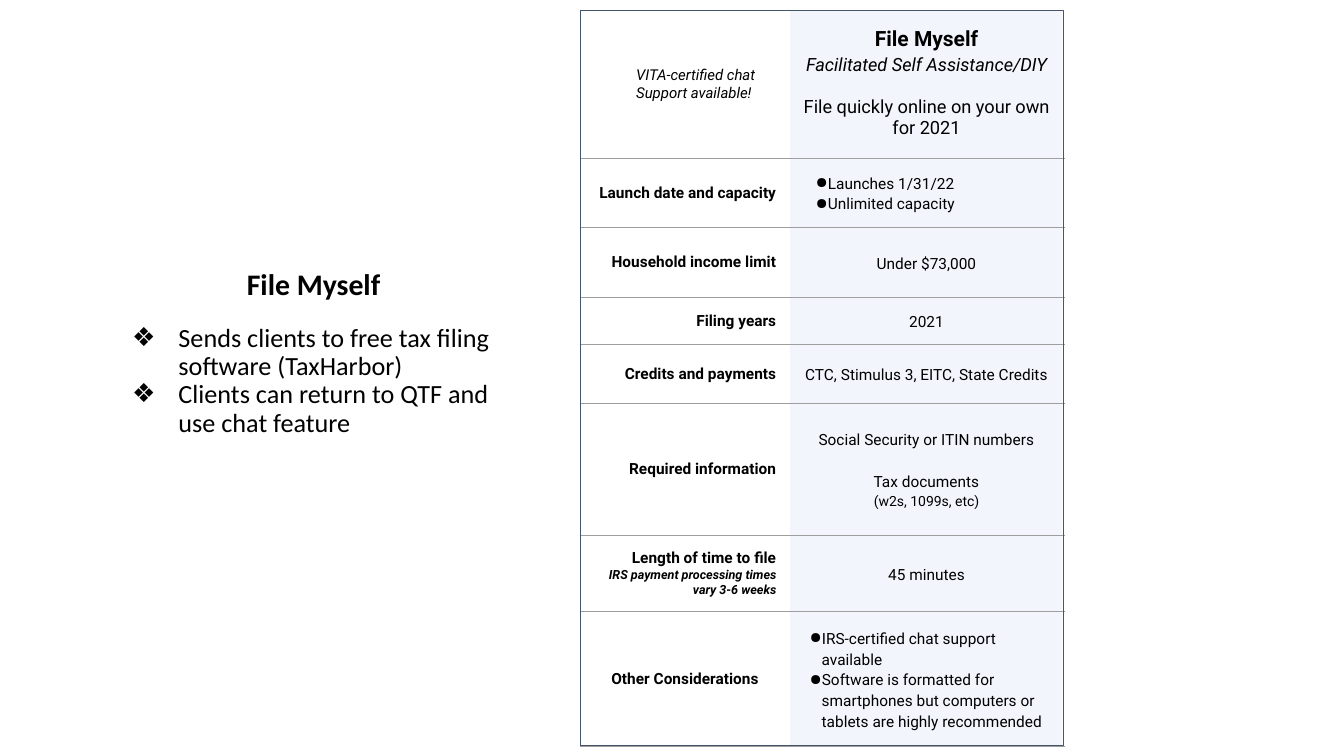
from dataclasses import dataclass

from lxml import etree
from pptx import Presentation
from pptx import util as u
from pptx.dml.color import RGBColor
from pptx.enum import shapes, text
from pptx.oxml.ns import qn

PX = 9144  # 100 px to the inch
SIDES = ("left", "right", "top", "bottom")


@dataclass(frozen=True)
class Theme:
    ink: str = "000000"
    tint: str = "E6EBF9"
    opaque: int = 49
    rule: str = "9E9E9E"
    white: str = "FFFFFF"
    edge: str = "44546A"
    main: str = "Calibri"
    grid: str = "Roboto"
    title: float = 21.3
    body: float = 18.7
    head: float = 15
    lead: float = 13
    cell: float = 11
    aside: float = 10.7
    small: float = 10
    note: float = 9
    hair: float = 0.75
    thick: float = 3
    pad: int = 13


def px(n):
    return u.Emu(n * PX)


def put(obj, vals):
    for name, val in vals.items():
        setattr(obj, name, val)


def sub(top, tag, **attrs):
    return etree.SubElement(top, qn(tag), attrs)


class Deck:
    def __init__(self, theme, wide, high):
        self.theme = theme
        self.pads = {f"margin_{side}": px(theme.pad) for side in SIDES}
        self.prs = Presentation()
        put(self.prs, {"slide_width": px(wide), "slide_height": px(high)})
        self.slide = self.prs.slides.add_slide(self.prs.slide_layouts[1])
        head = self.slide.shapes.title
        head._element.getparent().remove(head._element)

    def fill(self, frame, font, lines):
        """Fill a frame from (text, font values, paragraph values, bullet)."""
        put(frame, {"word_wrap": True, **self.pads})
        for i, (words, face, form, mark) in enumerate(lines):
            para = frame.add_paragraph() if i else frame.paragraphs[0]
            put(para, {"space_before": u.Pt(0), **form})
            run = para.add_run()
            run.text = words
            size = u.Pt(face["size"])
            put(run.font, {"name": font, "bold": False, **face, "size": size})
            run.font.color.rgb = RGBColor.from_string(self.theme.ink)
            self.mark(para, mark)

    def mark(self, para, mark):
        """Set the bullet and hanging indent, or clear both."""
        props = para._p.get_or_add_pPr()
        sign, left, hang = mark or ("", 0, 0)
        props.set("marL", str(px(left)))
        props.set("indent", str(px(-hang)))
        if sign:
            sub(props, "a:buChar", char=sign)
        else:
            sub(props, "a:buNone")

    def body(self, box, lines):
        hold = self.slide.placeholders[1]
        put(hold, dict(zip(("left", "top", "width", "height"), map(px, box))))
        self.fill(hold.text_frame, self.theme.main, lines)

    def label(self, box, lines):
        shape = self.slide.shapes.add_textbox(*map(px, box))
        self.fill(shape.text_frame, self.theme.grid, lines)

    def frame(self, box):
        kind = shapes.MSO_SHAPE.RECTANGLE
        shape = self.slide.shapes.add_shape(kind, *map(px, box))
        shape.shadow.inherit = False
        shape.fill.background()
        shape.line.color.rgb = RGBColor.from_string(self.theme.edge)
        shape.line.width = u.Pt(self.theme.hair)

    def table(self, box, cols, rows, cells):
        size = len(rows), len(cols)
        table = self.slide.shapes.add_table(*size, *map(px, box)).table
        put(table, {"first_row": False, "horz_banding": False})
        for col, wide in zip(table.columns, cols):
            col.width = px(wide)
        for row, high in zip(table.rows, rows):
            row.height = px(high)
        for r, pair in enumerate(cells):
            for c, lines in enumerate(pair):
                cell = table.cell(r, c)
                if r:
                    cell.vertical_anchor = text.MSO_ANCHOR.MIDDLE
                self.fill(cell.text_frame, self.theme.grid, lines)
                put(cell, self.pads)
                self.paint(cell, c == 1)

    def paint(self, cell, tinted):
        """Fill a cell and draw its four borders."""
        th = self.theme
        props = cell._tc.get_or_add_tcPr()
        if tinted:
            cell.fill.solid()
            cell.fill.fore_color.rgb = RGBColor.from_string(th.tint)
            tone = props.find(".//" + qn("a:srgbClr"))
            sub(tone, "a:alpha", val=str(th.opaque * 1000))
        else:
            cell.fill.background()
        edges = (
            ("L", th.white if tinted else th.rule, th.hair),
            ("R", th.white, th.thick if tinted else th.hair),
            ("T", th.rule, th.hair),
            ("B", th.rule, th.hair),
        )
        for i, (side, color, width) in enumerate(edges):
            line = etree.Element(qn("a:ln" + side), w=str(u.Pt(width)))
            sub(sub(line, "a:solidFill"), "a:srgbClr", val=color)
            props.insert(i, line)


def main():
    th = Theme()
    deck = Deck(th, 1333, 750)
    mid, right = text.PP_ALIGN.CENTER, text.PP_ALIGN.RIGHT
    gap = u.Pt(15)

    def name(words, size=th.cell, align=right, **face):
        face = {"size": size, "bold": True, **face}
        return words, face, {"alignment": align}, None

    def fact(words, size=th.cell, space=1.15, before=0, **face):
        form = {"alignment": mid, "line_spacing": space,
                "space_before": before}
        return words, {"size": size, **face}, form, None

    def item(words, left):
        form = {"line_spacing": 1.15}
        return words, {"size": th.cell}, form, ("●", left, 12)

    def point(words, before=0):
        form = {"line_spacing": 0.9, "space_before": u.Pt(before)}
        return words, {"size": th.body}, form, ("❖", 67, 46)

    cells = [
        ([], [fact("File Myself", th.head, bold=True),
              fact("Facilitated Self Assistance/DIY", th.lead, italic=True),
              fact("File quickly online on your own for 2021", th.lead,
                   1.0, gap)]),
        ([name("Launch date and capacity")],
         [item("Launches 1/31/22", 25), item("Unlimited capacity", 25)]),
        ([name("Household income limit")], [fact("Under $73,000")]),
        ([name("Filing years")], [fact("2021")]),
        ([name("Credits and payments")],
         [fact("CTC, Stimulus 3, EITC, State Credits")]),
        ([name("Required information")],
         [fact("Social Security or ITIN numbers"),
          fact("Tax documents", before=gap),
          fact("(w2s, 1099s, etc)", th.small)]),
        ([name("Length of time to file"),
          name("IRS payment processing times", th.note, italic=True),
          name("vary 3-6 weeks", th.note, italic=True)],
         [fact("45 minutes")]),
        ([name("Other Considerations", align=mid)],
         [item("IRS-certified chat support available", 19),
          item("Software is formatted for smartphones but computers or "
               "tablets are highly recommended", 19)]),
    ]
    rows = (147, 69, 69, 47, 58, 131, 76, 134)
    deck.table((576, 10, 479, sum(rows)), (207, 272), rows, cells)
    deck.label((618, 52, 150, 63), [
        ("VITA-certified chat Support available!",
         {"size": th.aside, "italic": True}, {}, None)])
    deck.body((97, 255, 428, 241), [
        fact("File Myself", th.title, 0.9, bold=True),
        point("Sends clients to free tax filing software (TaxHarbor)", 16),
        point("Clients can return to QTF and use chat feature")])
    deck.frame((576, 10, 479, 730))
    deck.prs.save("out.pptx")


if __name__ == "__main__":
    main()
